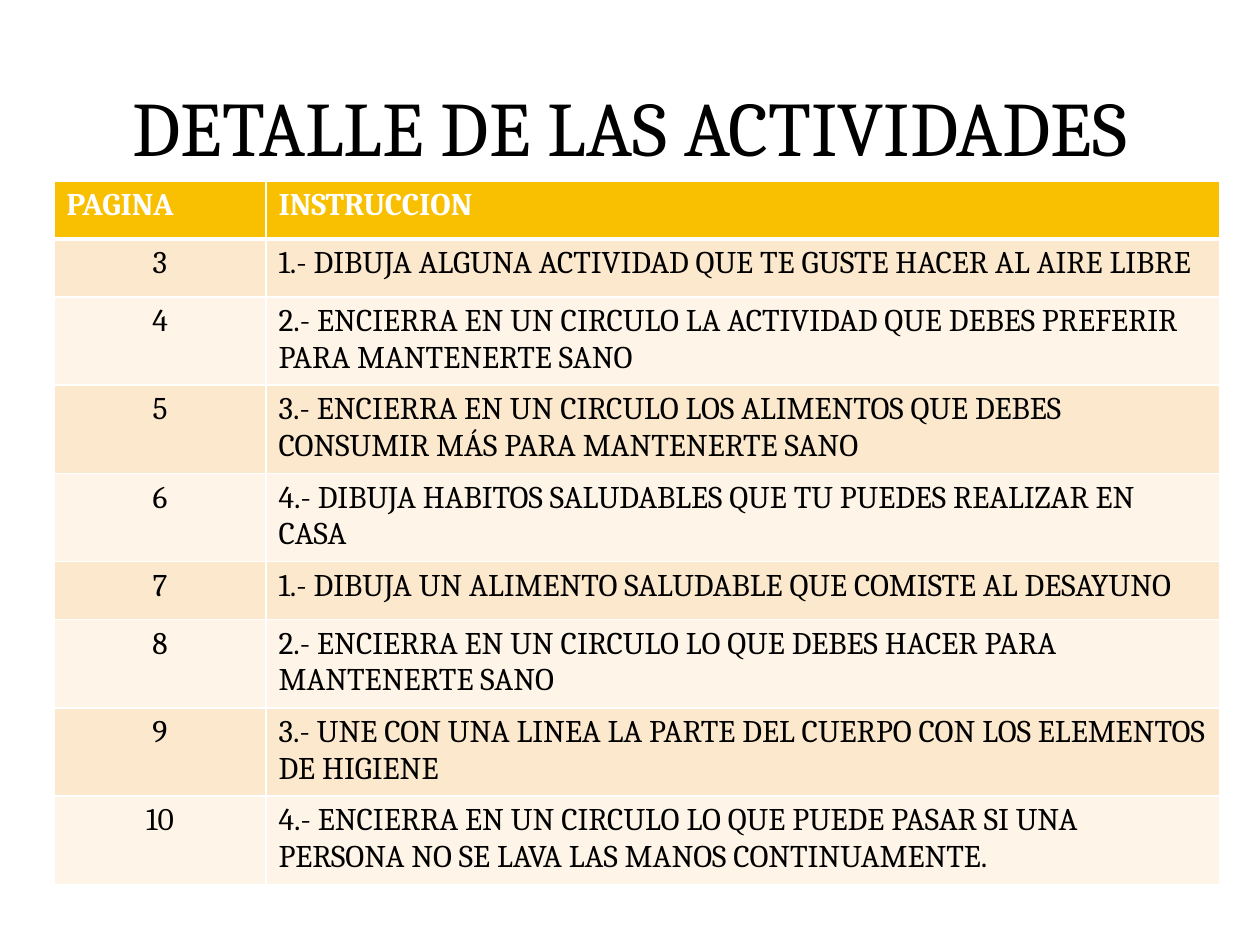
from lxml.etree import SubElement
from pptx import Presentation
from pptx.dml.color import RGBColor
from pptx.enum.text import MSO_ANCHOR, PP_ALIGN
from pptx.oxml.ns import qn
from pptx.util import Pt

EMU_PER_PX = 914400 / 126
COLORS = {
    "white": "FFFFFF",
    "ink": "000000",
    "header": "F8C000",
    "odd": "FCE8CC",
    "even": "FEF4E7",
}
HEADINGS = ("PAGINA", "INSTRUCCION")
FIRST_PAGE = 3
INSTRUCTIONS = [
    "1.- DIBUJA ALGUNA ACTIVIDAD QUE TE GUSTE HACER AL AIRE LIBRE",
    "2.- ENCIERRA EN UN CIRCULO LA ACTIVIDAD QUE DEBES PREFERIR PARA MANTENERTE SANO",
    "3.- ENCIERRA EN UN CIRCULO LOS ALIMENTOS QUE DEBES CONSUMIR MÁS PARA MANTENERTE SANO",
    "4.- DIBUJA HABITOS SALUDABLES QUE TU PUEDES REALIZAR EN CASA",
    "1.- DIBUJA UN ALIMENTO SALUDABLE QUE COMISTE AL DESAYUNO",
    "2.- ENCIERRA EN UN CIRCULO LO QUE DEBES HACER PARA MANTENERTE SANO",
    "3.- UNE CON UNA LINEA LA PARTE DEL CUERPO CON LOS ELEMENTOS DE HIGIENE",
    "4.- ENCIERRA EN UN CIRCULO LO QUE PUEDE PASAR SI UNA PERSONA NO SE LAVA LAS MANOS CONTINUAMENTE.",
]


def px(length):
    return round(length * EMU_PER_PX)


def write_text(frame, text, size=18, color="ink", bold=False, align=PP_ALIGN.LEFT):
    frame.word_wrap = True
    paragraph = frame.paragraphs[0]
    paragraph.alignment = align
    run = paragraph.add_run()
    run.text = text
    run.font.name = SlideBuilder.font
    run.font.size = Pt(size)
    run.font.bold = bold
    run.font.color.rgb = RGBColor.from_string(COLORS[color])


class SlideBuilder:
    font = "Cambria"

    def __init__(self, presentation):
        self.slide = presentation.slides.add_slide(presentation.slide_layouts[6])

    def title(self, text, left, top, width, height):
        heading = self.slide.shapes.add_textbox(*map(px, (left, top, width, height)))
        heading.text_frame.vertical_anchor = MSO_ANCHOR.BOTTOM
        write_text(heading.text_frame, text, size=44, align=PP_ALIGN.CENTER)

    def cell_borders(self, cell, top, bottom):
        properties = cell._tc.get_or_add_tcPr()
        for side, width in (("L", 1), ("R", 1), ("T", top), ("B", bottom)):
            border = SubElement(properties, qn(f"a:ln{side}"), w=str(Pt(width)))
            fill = SubElement(border, qn("a:solidFill"))
            SubElement(fill, qn("a:srgbClr"), val=COLORS["white"])

    def table(self, rows, left, top, widths, row_height):
        frame = self.slide.shapes.add_table(
            len(rows), len(widths), px(left), px(top),
            px(sum(widths)), px(row_height * len(rows)),
        )
        activities = frame.table
        for column, width in zip(activities.columns, widths):
            column.width = px(width)
        for r, values in enumerate(rows):
            activities.rows[r].height = px(row_height)
            header = r == 0
            band = "header" if header else "odd" if r % 2 else "even"
            for c, value in enumerate(values):
                cell = activities.cell(r, c)
                self.cell_borders(cell, 3 if r == 1 else 1, 3 if header else 1)
                cell.fill.solid()
                cell.fill.fore_color.rgb = RGBColor.from_string(COLORS[band])
                write_text(
                    cell.text_frame, value, bold=header,
                    color="white" if header else "ink",
                    align=PP_ALIGN.LEFT if header or c else PP_ALIGN.CENTER,
                )


def main():
    presentation = Presentation()
    presentation.slide_width, presentation.slide_height = px(1260), px(945)
    builder = SlideBuilder(presentation)
    builder.title("DETALLE DE LAS ACTIVIDADES", 69, 29, 1123, 149)
    pages = [(str(page), text) for page, text in enumerate(INSTRUCTIONS, FIRST_PAGE)]
    builder.table([HEADINGS, *pages], 54, 181, (212, 954), 58)
    presentation.save("out.pptx")


if __name__ == "__main__":
    main()
